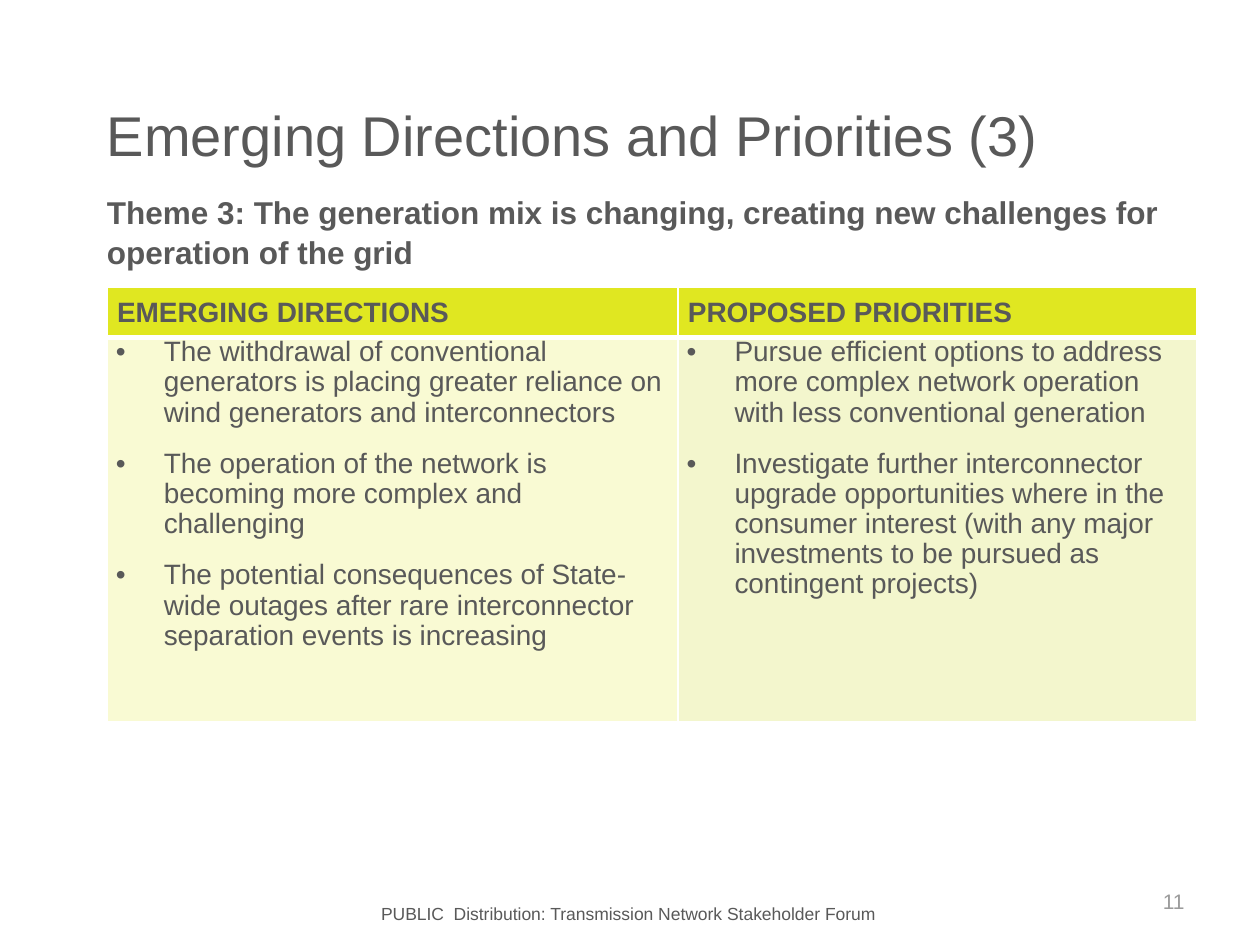
from dataclasses import dataclass

from lxml import etree
from pptx import Presentation
from pptx.dml.color import RGBColor
from pptx.enum.text import MSO_ANCHOR, PP_ALIGN
from pptx.oxml.ns import qn
from pptx.util import Emu, Pt

PX = 9144  # EMU per px, 100 px to the inch
FONT = "Arial"
GREY = RGBColor(0x59, 0x59, 0x59)
PALE_GREY = RGBColor(0x9B, 0x9B, 0x9B)
LIME = RGBColor(0xE0, 0xE7, 0x21)
CREAM = RGBColor(0xF9, 0xFA, 0xD3)
PALE_LIME = RGBColor(0xF3, 0xF6, 0xCD)
WHITE = RGBColor(0xFF, 0xFF, 0xFF)
LEFT, CENTER, RIGHT = PP_ALIGN.LEFT, PP_ALIGN.CENTER, PP_ALIGN.RIGHT
TOP, MIDDLE = MSO_ANCHOR.TOP, MSO_ANCHOR.MIDDLE
BULLET_INDENT = 38
HEADER_HEIGHT, BODY_HEIGHT = 40, 305


@dataclass
class Label:
    text: str
    box: tuple[int, int, int, int]
    size: int
    color: RGBColor = GREY
    bold: bool = False
    align: PP_ALIGN = LEFT
    anchor: MSO_ANCHOR = TOP
    line_spacing: float = 1.0


@dataclass
class Column:
    heading: str
    width: int
    fill: RGBColor
    points: list[str]


LABELS = [
    Label("PUBLIC  Distribution: Transmission Network Stakeholder Forum",
          (223, 712, 551, 27), 10, align=CENTER),
    Label("Emerging Directions and Priorities (3)", (75, 53, 896, 107), 32, anchor=MIDDLE),
    Label("11", (717, 695, 233, 40), 12, PALE_GREY, align=RIGHT, anchor=MIDDLE),
    Label("Theme 3: The generation mix is changing, creating new challenges for "
          "operation of the grid", (75, 147, 860, 71), 18, bold=True, line_spacing=1.05),
]

COLUMNS = [
    Column("EMERGING DIRECTIONS", 453, CREAM, [
        "The withdrawal of conventional generators is placing greater reliance on "
        "wind generators and interconnectors",
        "The operation of the network is becoming more complex and challenging",
        "The potential consequences of State-wide outages after rare interconnector "
        "separation events is increasing",
    ]),
    Column("PROPOSED PRIORITIES", 412, PALE_LIME, [
        "Pursue efficient options to address more complex network operation with "
        "less conventional generation",
        "Investigate further interconnector upgrade opportunities where in the "
        "consumer interest (with any major investments to be pursued as contingent "
        "projects)",
    ]),
]


def px(n: int) -> Emu:
    return Emu(n * PX)


def write(tf, lines: list[str], *, size: int, color: RGBColor = GREY, bold: bool = False,
          align: PP_ALIGN = LEFT, gap: int = 0, bullet: bool = False,
          line_spacing: float = 1.0) -> None:
    """Fill a text frame, one paragraph a line, with gap points around each."""
    for i, line in enumerate(lines):
        p = tf.add_paragraph() if i else tf.paragraphs[0]
        if bullet:
            pPr = p._p.get_or_add_pPr()
            pPr.set("marL", str(px(BULLET_INDENT)))
            pPr.set("indent", str(px(-BULLET_INDENT)))
            etree.SubElement(pPr, qn("a:buFont"), typeface=FONT)
            etree.SubElement(pPr, qn("a:buChar"), char="•")
        p.alignment = align
        p.line_spacing = line_spacing
        p.space_before = Pt(gap if i else 0)
        p.space_after = Pt(gap)
        r = p.add_run()
        r.text = line
        r.font.name, r.font.size, r.font.bold = FONT, Pt(size), bold
        r.font.color.rgb = color


def add_label(slide, label: Label) -> None:
    tf = slide.shapes.add_textbox(*map(px, label.box)).text_frame
    tf.word_wrap = True
    tf.vertical_anchor = label.anchor
    write(tf, [label.text], size=label.size, color=label.color, bold=label.bold,
          align=label.align, line_spacing=label.line_spacing)


def style_cell(cell, fill: RGBColor, anchor: MSO_ANCHOR, margin: int,
               top: int = 1, bottom: int = 1) -> None:
    """Set margins, white borders (widths in points) and fill."""
    cell.vertical_anchor = anchor
    cell.margin_left = cell.margin_right = px(margin)
    cell.margin_top = cell.margin_bottom = 0
    tcPr = cell._tc.get_or_add_tcPr()
    for side, width in (("L", 1), ("R", 1), ("T", top), ("B", bottom)):
        ln = etree.SubElement(tcPr, qn(f"a:ln{side}"), w=str(Pt(width)))
        solid = etree.SubElement(ln, qn("a:solidFill"))
        etree.SubElement(solid, qn("a:srgbClr"), val=str(WHITE))
    cell.fill.solid()
    cell.fill.fore_color.rgb = fill


def add_priorities_table(slide, columns: list[Column], left: int, top: int) -> None:
    width = sum(c.width for c in columns)
    table = slide.shapes.add_table(2, len(columns), px(left), px(top), px(width),
                                   px(HEADER_HEIGHT + BODY_HEIGHT)).table
    table.rows[0].height, table.rows[1].height = px(HEADER_HEIGHT), px(BODY_HEIGHT)
    for i, column in enumerate(columns):
        table.columns[i].width = px(column.width)
        header, body = table.cell(0, i), table.cell(1, i)
        style_cell(header, LIME, MIDDLE, 8, bottom=3)
        write(header.text_frame, [column.heading], size=16, bold=True, gap=3)
        style_cell(body, column.fill, TOP, 7, top=3)
        write(body.text_frame, column.points, size=16, gap=6, bullet=True,
              line_spacing=0.97)


def main() -> None:
    prs = Presentation()
    prs.slide_width, prs.slide_height = px(1000), px(750)
    slide = prs.slides.add_slide(prs.slide_layouts[6])
    for label in LABELS:
        add_label(slide, label)
    add_priorities_table(slide, COLUMNS, 85, 228)
    prs.save("out.pptx")


if __name__ == "__main__":
    main()
